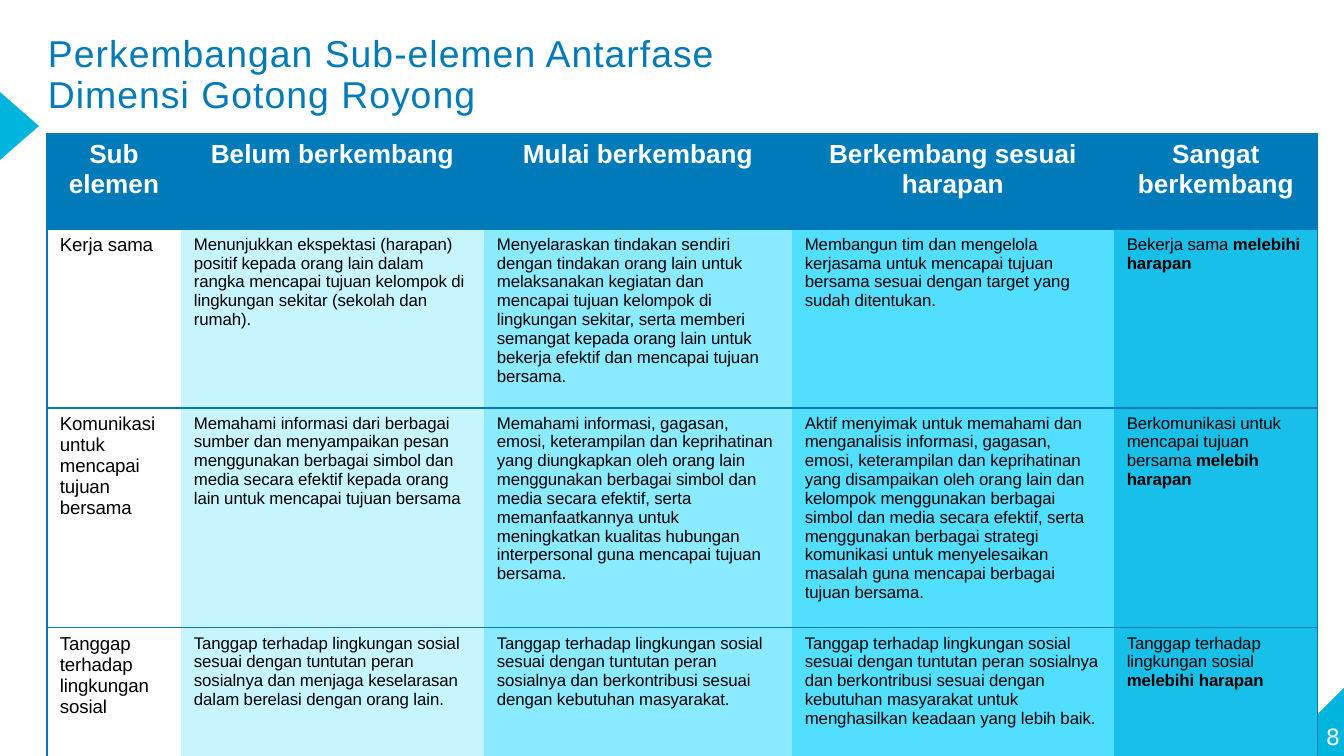
from lxml import etree
from pptx import Presentation
from pptx import util as u
from pptx.dml.color import RGBColor
from pptx.enum import text
from pptx.oxml import ns

BLUE = RGBColor(0x00, 0x7A, 0xB8)
CYAN = RGBColor(0x00, 0xB5, 0xDD)
WHITE = RGBColor(0xFF, 0xFF, 0xFF)
BLACK = RGBColor(0x00, 0x00, 0x00)
COLUMN_FILLS = [
    None,
    RGBColor(0xC7, 0xF5, 0xFF),
    RGBColor(0x8A, 0xEA, 0xFF),
    RGBColor(0x52, 0xDF, 0xFF),
    RGBColor(0x18, 0xBF, 0xE8),
]
SCALE = 914400 / 134.4

TITLE = ["Perkembangan Sub-elemen Antarfase", "Dimensi Gotong Royong"]
COLUMN_WIDTHS = [134, 303, 308, 322, 204]
ROW_HEIGHTS = [95, 179, 220, 129]
HEADERS = ["Sub elemen", "Belum berkembang", "Mulai berkembang",
           "Berkembang sesuai harapan", "Sangat berkembang"]
# The last column is a pair: plain start, bold end.
ROWS = [
    ["Kerja sama",
     "Menunjukkan ekspektasi (harapan) positif kepada orang lain dalam rangka "
     "mencapai tujuan kelompok di lingkungan sekitar (sekolah dan rumah).",
     "Menyelaraskan tindakan sendiri dengan tindakan orang lain untuk "
     "melaksanakan kegiatan dan mencapai tujuan kelompok di lingkungan sekitar, "
     "serta memberi semangat kepada orang lain untuk bekerja efektif dan "
     "mencapai tujuan bersama.",
     "Membangun tim dan mengelola kerjasama untuk mencapai tujuan bersama "
     "sesuai dengan target yang sudah ditentukan.",
     ("Bekerja sama ", "melebihi harapan")],
    ["Komunikasi untuk mencapai tujuan bersama",
     "Memahami informasi dari berbagai sumber dan menyampaikan pesan "
     "menggunakan berbagai simbol dan media secara efektif kepada orang lain "
     "untuk mencapai tujuan bersama",
     "Memahami informasi, gagasan, emosi, keterampilan dan keprihatinan yang "
     "diungkapkan oleh orang lain menggunakan berbagai simbol dan media secara "
     "efektif, serta memanfaatkannya untuk meningkatkan kualitas hubungan "
     "interpersonal guna mencapai tujuan bersama.",
     "Aktif menyimak untuk memahami dan menganalisis informasi, gagasan, emosi, "
     "keterampilan dan keprihatinan yang disampaikan oleh orang lain dan "
     "kelompok menggunakan berbagai simbol dan media secara efektif, serta "
     "menggunakan berbagai strategi komunikasi untuk menyelesaikan masalah guna "
     "mencapai berbagai tujuan bersama.",
     ("Berkomunikasi untuk mencapai tujuan bersama ", "melebih harapan")],
    ["Tanggap terhadap lingkungan sosial",
     "Tanggap terhadap lingkungan sosial sesuai dengan tuntutan peran sosialnya "
     "dan menjaga keselarasan dalam berelasi dengan orang lain.",
     "Tanggap terhadap lingkungan sosial sesuai dengan tuntutan peran sosialnya "
     "dan berkontribusi sesuai dengan kebutuhan masyarakat.",
     "Tanggap terhadap lingkungan sosial sesuai dengan tuntutan peran sosialnya "
     "dan berkontribusi sesuai dengan kebutuhan masyarakat untuk menghasilkan "
     "keadaan yang lebih baik.",
     ("Tanggap terhadap lingkungan sosial ", "melebihi harapan")],
]


def px(n):
    return u.Emu(round(n * SCALE))


def add_text(p, words, size=9, color=BLACK, bold=False, font="Arial", spacing=0):
    """Append a run to p; spacing is the letter spacing in points."""
    r = p.add_run()
    r.text = words
    r.font.name, r.font.size, r.font.bold = font, u.Pt(size), bold
    r.font.color.rgb = color
    if spacing:
        r.font._element.set("spc", str(round(spacing * 100)))


def set_margins(target, left, top, right=0):
    target.margin_left, target.margin_top = px(left), px(top)
    target.margin_right, target.margin_bottom = px(right), 0


def set_borders(cell, drawn):
    """Draw the sides named in drawn (of L, R, T, B) and clear the others."""
    tc_pr = cell._tc.get_or_add_tcPr()
    for side in "LRTB":
        ln = etree.SubElement(tc_pr, ns.qn(f"a:ln{side}"), w=str(u.Pt(0.75)))
        if side in drawn:
            fill = etree.SubElement(ln, ns.qn("a:solidFill"))
            etree.SubElement(fill, ns.qn("a:srgbClr"), val=str(BLUE))
        else:
            etree.SubElement(ln, ns.qn("a:noFill"))


class SlideBuilder:
    """Holds the current slide and the style of its elements."""

    def __init__(self, prs):
        self.s = prs.slides.add_slide(prs.slide_layouts[5])

    def title(self, x, y, w, h, lines):
        sp = self.s.shapes.title
        sp.left, sp.top, sp.width, sp.height = map(px, (x, y, w, h))
        tf = sp.text_frame
        set_margins(tf, 2, 1)
        tf.word_wrap, tf.auto_size = True, text.MSO_AUTO_SIZE.NONE
        tf.vertical_anchor = text.MSO_ANCHOR.TOP
        for i, line in enumerate(lines):
            p = tf.add_paragraph() if i else tf.paragraphs[0]
            p.alignment = text.PP_ALIGN.LEFT
            p.line_spacing, p.space_before = u.Pt(21.6), u.Pt(0)
            add_text(p, line, size=20, color=BLUE, spacing=0.55)

    def triangles(self, *outlines):
        first, *others = outlines
        fb = self.s.shapes.build_freeform(*first[0], scale=SCALE)
        fb.add_line_segments(first[1:], close=True)
        for points in others:
            fb.move_to(*points[0])
            fb.add_line_segments(points[1:], close=True)
        sp = fb.convert_to_shape()
        sp.shadow.inherit = False
        sp.fill.solid()
        sp.fill.fore_color.rgb = CYAN
        sp.line.fill.background()

    def page_number(self, x, y, w, h, number):
        tf = self.s.shapes.add_textbox(*map(px, (x, y, w, h))).text_frame
        set_margins(tf, 1, 1)
        tf.word_wrap = True
        add_text(tf.paragraphs[0], number, size=12, color=WHITE,
                 font="DejaVu Sans", spacing=-1.4)

    def table(self, x, y, widths, heights, headers, rows):
        table = self.s.shapes.add_table(
            len(heights), len(widths), px(x), px(y),
            px(sum(widths)), px(sum(heights))).table
        for column, width in zip(table.columns, widths):
            column.width = px(width)
        for row, height in zip(table.rows, heights):
            row.height = px(height)
        for i, row in enumerate([headers, *rows]):
            for j, content in enumerate(row):
                self.cell(table, i, j, content)

    def cell(self, table, i, j, content):
        cell = table.cell(i, j)
        last = len(table.columns) - 1
        set_borders(cell, "TB" + ("L" if j == 0 else "") + ("R" if j == last else ""))
        set_margins(cell, 13, 6, 13)
        cell.vertical_anchor = text.MSO_ANCHOR.TOP
        fill = COLUMN_FILLS[j] if i else BLUE
        if fill is None:
            cell.fill.background()
        else:
            cell.fill.solid()
            cell.fill.fore_color.rgb = fill
        p = cell.text_frame.paragraphs[0]
        if i == 0:
            p.alignment = text.PP_ALIGN.CENTER
            add_text(p, content, size=14, color=WHITE, bold=True)
            return
        parts = (content,) if isinstance(content, str) else content
        for k, part in enumerate(parts):
            add_text(p, part, size=9 if j else 10, bold=k == 1, spacing=-0.05)


def main():
    prs = Presentation()
    prs.slide_width, prs.slide_height = px(1344), px(756)
    slide = SlideBuilder(prs)
    slide.triangles([(39, 126), (0, 92), (0, 160)],
                    [(1344, 688), (1276, 756), (1344, 756)])
    slide.title(46, 34, 690, 85, TITLE)
    slide.page_number(1325, 722, 16, 31, "8")
    slide.table(47, 134, COLUMN_WIDTHS, ROW_HEIGHTS, HEADERS, ROWS)
    prs.save("out.pptx")


if __name__ == "__main__":
    main()
